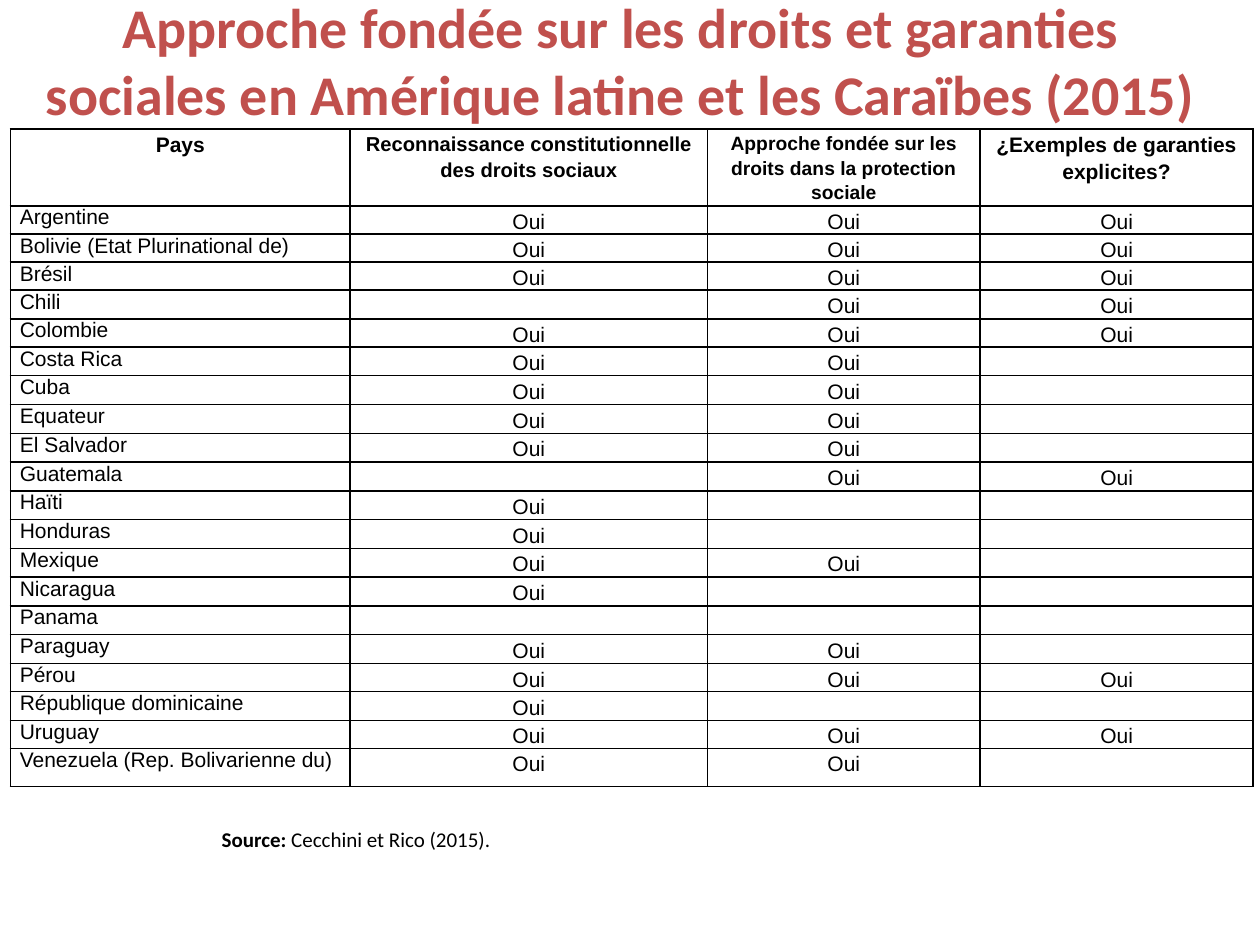
from pptx import Presentation
from pptx.dml.color import RGBColor
from pptx.enum.text import MSO_ANCHOR, MSO_AUTO_SIZE, PP_ALIGN as Align
from pptx.oxml.ns import qn
from pptx.util import Cm, Pt
from lxml.etree import SubElement

COLORS = {"title": "C0504D", "text": "000000", "border": "000000"}
TITLE = ("Approche fondée sur les droits et garanties sociales "
         "en Amérique latine et les Caraïbes (2015)")
SOURCE = [("Source: ", True), ("Cecchini et Rico (2015).", False)]
HEADERS = [
    ("Pays", 12),
    ("Reconnaissance constitutionnelle des droits sociaux", 11.5),
    ("Approche fondée sur les droits dans la protection sociale", 11),
    ("¿Exemples de garanties explicites?", 12),
]
YES = "Oui"
COUNTRIES = [
    ("Argentine", YES, YES, YES),
    ("Bolivie (Etat Plurinational de)", YES, YES, YES),
    ("Brésil", YES, YES, YES),
    ("Chili", "", YES, YES),
    ("Colombie", YES, YES, YES),
    ("Costa Rica", YES, YES, ""),
    ("Cuba", YES, YES, ""),
    ("Equateur", YES, YES, ""),
    ("El Salvador", YES, YES, ""),
    ("Guatemala", "", YES, YES),
    ("Haïti", YES, "", ""),
    ("Honduras", YES, "", ""),
    ("Mexique", YES, YES, ""),
    ("Nicaragua", YES, "", ""),
    ("Panama", "", "", ""),
    ("Paraguay", YES, YES, ""),
    ("Pérou", YES, YES, YES),
    ("République dominicaine", YES, "", ""),
    ("Uruguay", YES, YES, YES),
    ("Venezuela (Rep. Bolivarienne du)", YES, YES, ""),
]
COLUMN_WIDTHS = [6.85, 7.2, 5.5, 5.5]
HEADER_HEIGHT, ROW_HEIGHT, SHORT_HEIGHT, LAST_HEIGHT = 1.55, 0.58, 0.54, 0.77
SHORT_ROWS = {1, 2, 3, 5, 17, 19}


def write(para, text, font="Arial", size=12, bold=False, color="text",
          align=None, line=None, after=None):
    para.alignment = align
    para.line_spacing = line
    if after is not None:
        para.space_after = Pt(after)
    if not text:
        SubElement(para._p, qn("a:endParaRPr"), sz=str(size * 100))
        return
    span = para.add_run()
    span.text = text
    span.font.name = font
    span.font.size = Pt(size)
    span.font.bold = bold
    span.font.color.rgb = RGBColor.from_string(COLORS[color])


def draw_borders(cell):
    properties = cell._tc.get_or_add_tcPr()
    for side in ("lnL", "lnR", "lnT", "lnB"):
        border = SubElement(properties, qn(f"a:{side}"), w=str(Pt(1)))
        fill = SubElement(border, qn("a:solidFill"))
        SubElement(fill, qn("a:srgbClr"), val=COLORS["border"])
    cell.fill.background()


def row_height(row):
    if row == 0:
        return HEADER_HEIGHT
    if row == len(COUNTRIES):
        return LAST_HEIGHT
    return SHORT_HEIGHT if row in SHORT_ROWS else ROW_HEIGHT


def add_title(page):
    title = page.shapes.title
    title.left, title.top, title.width, title.height = Cm(0.5), Cm(-0.15), Cm(24.03), Cm(2.7)
    frame = title.text_frame
    frame.auto_size = MSO_AUTO_SIZE.NONE
    frame.vertical_anchor = MSO_ANCHOR.MIDDLE
    frame.margin_top = frame.margin_bottom = 0
    write(frame.paragraphs[0], TITLE, font="Calibri", size=32, bold=True,
          color="title", align=Align.CENTER)


def add_country_table(page):
    heights = [row_height(row) for row in range(len(COUNTRIES) + 1)]
    table = page.shapes.add_table(
        len(heights), len(HEADERS), Cm(0.21), Cm(2.6),
        Cm(sum(COLUMN_WIDTHS)), Cm(sum(heights))).table
    table.first_row = table.horz_banding = False
    for column, width in zip(table.columns, COLUMN_WIDTHS):
        column.width = Cm(width)
    for row, height in zip(table.rows, heights):
        row.height = Cm(height)

    contents = [[text for text, _ in HEADERS], *COUNTRIES]
    for row, texts in enumerate(contents):
        for column, text in enumerate(texts):
            cell = table.cell(row, column)
            is_name = row > 0 and column == 0
            cell.margin_left = cell.margin_right = Cm(0.19)
            cell.margin_top = Cm(0 if is_name else 0.02)
            cell.margin_bottom = 0
            draw_borders(cell)
            para = cell.text_frame.paragraphs[0]
            if is_name:
                write(para, text, align=Align.JUSTIFY)
            else:
                write(para, text, size=HEADERS[column][1] if row == 0 else 12,
                      bold=row == 0, align=Align.CENTER,
                      line=1.15 if text else None, after=4 if text else None)


def add_source(page):
    box = page.shapes.add_textbox(Cm(4.22), Cm(16.54), Cm(17.65), Cm(0.77))
    box.text_frame.word_wrap = True
    for text, bold in SOURCE:
        write(box.text_frame.paragraphs[0], text, font="Calibri", bold=bold)


def main():
    deck = Presentation()
    deck.slide_width, deck.slide_height = Cm(25.4), Cm(19.05)
    page = deck.slides.add_slide(deck.slide_layouts[5])
    add_title(page)
    add_country_table(page)
    add_source(page)
    deck.save("out.pptx")


if __name__ == "__main__":
    main()
